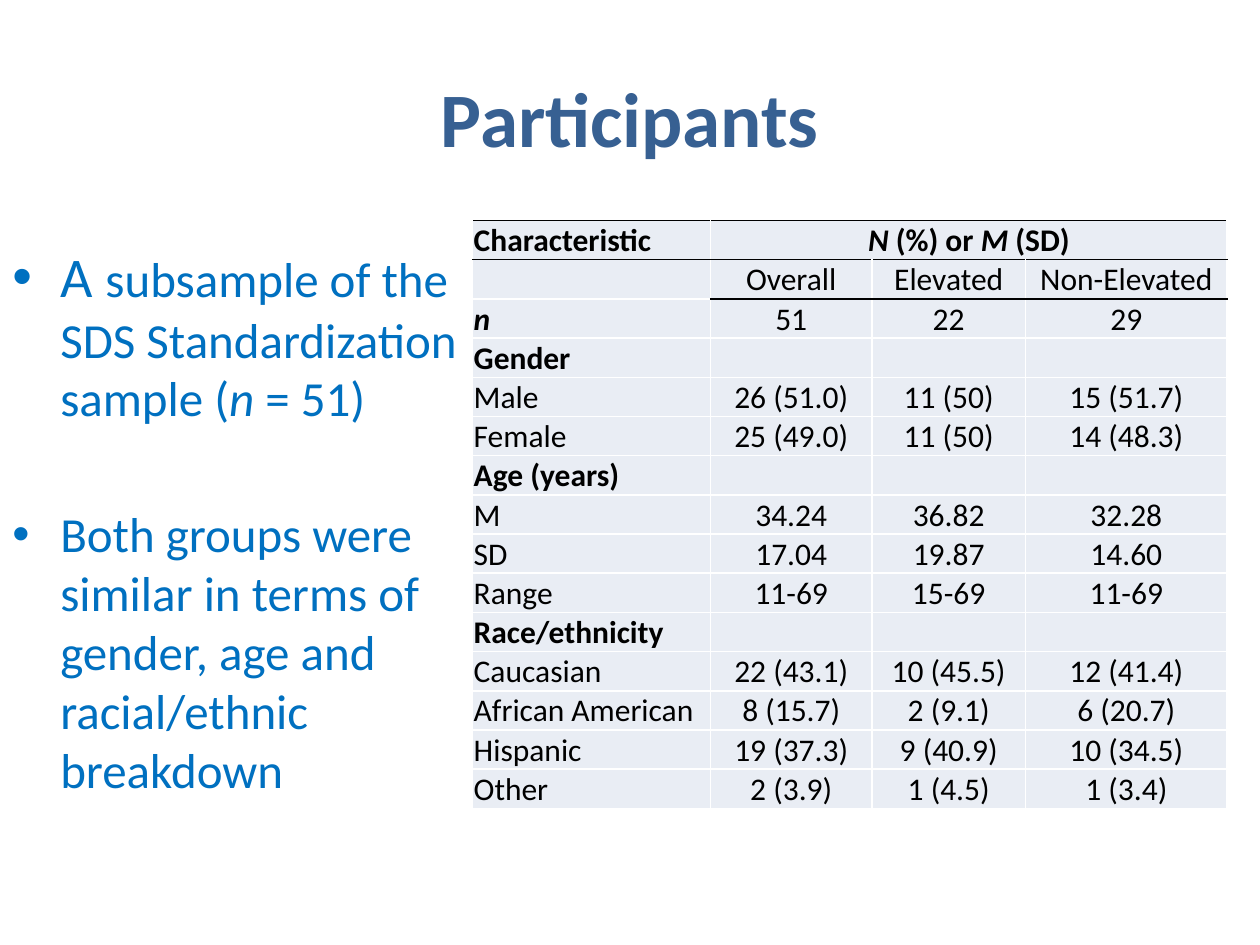
from lxml.etree import SubElement
from pptx import Presentation
from pptx.dml.color import RGBColor
from pptx.enum.text import MSO_ANCHOR, PP_ALIGN
from pptx.oxml import parse_xml
from pptx.oxml.ns import nsdecls, qn
from pptx.util import Inches, Pt

TITLE_BLUE = RGBColor(0x37, 0x60, 0x92)
BODY_BLUE = RGBColor(0x00, 0x70, 0xC0)
BLACK = RGBColor(0x00, 0x00, 0x00)
WHITE = RGBColor(0xFF, 0xFF, 0xFF)
CELL_FILL = RGBColor(0xE9, 0xED, 0xF4)

BOLD = {"bold": True}
ITALIC = {"italic": True}
BOLD_ITALIC = {"bold": True, "italic": True}

# Each bullet is a list of (text, format) runs
BULLETS = [
    [("A ", {"size": Pt(32)}), ("subsample of the SDS Standardization sample (", {}),
     ("n", ITALIC), (" = 51)", {})],
    [("Both groups were similar in terms of gender, age and racial/ethnic breakdown", {})],
]

SPANNING_HEADING = [("N", BOLD_ITALIC), (" (%) or ", BOLD), ("M", BOLD_ITALIC), (" (SD)", BOLD)]
GROUP_HEADINGS = {"Characteristic": BOLD, "n": BOLD_ITALIC, "Gender": BOLD,
                  "Age (years)": BOLD, "Race/ethnicity": BOLD}
CHARACTERISTICS = [
    ["Characteristic"],
    ["", "Overall", "Elevated", "Non-Elevated"],
    ["n", "51", "22", "29"],
    ["Gender"],
    ["Male", "26 (51.0)", "11 (50)", "15 (51.7)"],
    ["Female", "25 (49.0)", "11 (50)", "14 (48.3)"],
    ["Age (years)"],
    ["M", "34.24", "36.82", "32.28"],
    ["SD", "17.04", "19.87", "14.60"],
    ["Range", "11-69", "15-69", "11-69"],
    ["Race/ethnicity"],
    ["Caucasian", "22 (43.1)", "10 (45.5)", "12 (41.4)"],
    ["African American", "8 (15.7)", "2 (9.1)", "6 (20.7)"],
    ["Hispanic", "19 (37.3)", "9 (40.9)", "10 (34.5)"],
    ["Other", "2 (3.9)", "1 (4.5)", "1 (3.4)"],
]
COLUMN_WIDTHS = [1.89, 1.28, 1.22, 1.6]


class SlideWriter:
    """Holds the text style and the current slide."""

    font_name = "Calibri"

    def __init__(self, slide):
        self.slide = slide

    def runs(self, paragraph, parts, size, color):
        for text, changes in parts:
            run = paragraph.add_run()
            run.text = text
            values = {"name": self.font_name, "size": size, "bold": False, "italic": False}
            for name, value in (values | changes).items():
                setattr(run.font, name, value)
            run.font.color.rgb = color

    def text_frame(self, left, top, width, height, **settings):
        box = self.slide.shapes.add_textbox(
            Inches(left), Inches(top), Inches(width), Inches(height))
        for name, value in ({"word_wrap": True} | settings).items():
            setattr(box.text_frame, name, value)
        return box.text_frame

    def title(self, text):
        frame = self.text_frame(0.5, 0.3, 9, 1.25, vertical_anchor=MSO_ANCHOR.MIDDLE)
        heading = frame.paragraphs[0]
        heading.alignment = PP_ALIGN.CENTER
        self.runs(heading, [(text, BOLD)], Pt(44), TITLE_BLUE)

    def bullets(self, items):
        frame = self.text_frame(0, 1.83, 3.92, 1.75, margin_top=Inches(0.09))
        for index, parts in enumerate(items):
            bullet = frame.paragraphs[0] if index == 0 else frame.add_paragraph()
            properties = bullet._p.get_or_add_pPr()
            properties.set("marL", str(Inches(0.38)))
            properties.set("indent", str(-Inches(0.38)))
            SubElement(properties, qn("a:buFont"), typeface="Arial")
            SubElement(properties, qn("a:buChar"), char="•")
            if index:
                bullet.space_before = Pt(44)
            self.runs(bullet, parts, Pt(28), BODY_BLUE)

    def borders(self, cell, top, bottom):
        sides = {"lnL": WHITE, "lnR": WHITE, "lnT": top, "lnB": bottom}
        for position, (side, color) in enumerate(sides.items()):
            line = parse_xml(
                f'<a:{side} {nsdecls("a")} w="{Pt(1)}"><a:solidFill>'
                f'<a:srgbClr val="{color}"/></a:solidFill></a:{side}>')
            cell._tc.get_or_add_tcPr().insert(position, line)

    def cell(self, cell, parts, alignment, top, bottom):
        inset = Inches(0.01)
        layout = {"margin_left": inset, "margin_right": inset, "margin_top": inset,
                  "margin_bottom": 0, "vertical_anchor": MSO_ANCHOR.BOTTOM}
        for name, value in layout.items():
            setattr(cell, name, value)
        cell.fill.solid()
        cell.fill.fore_color.rgb = CELL_FILL
        self.borders(cell, top, bottom)
        paragraph = cell.text_frame.paragraphs[0]
        paragraph.alignment = alignment
        self.runs(paragraph, parts, Pt(18), BLACK)

    def table(self, rows, widths):
        frame = self.slide.shapes.add_table(
            len(rows), len(widths), Inches(3.75), Inches(1.75), Inches(sum(widths)), Inches(4.67))
        table = frame.table
        table.first_row = table.horz_banding = False
        for column, width in zip(table.columns, widths):
            column.width = Inches(width)
        table.cell(0, 1).merge(table.cell(0, len(widths) - 1))

        for r, row in enumerate(rows):
            for c in range(len(widths)):
                text = row[c] if c < len(row) else ""
                parts = [(text, GROUP_HEADINGS.get(text, {}))] if text else []
                if (r, c) == (0, 1):
                    parts = SPANNING_HEADING
                # Rules frame the heading row and underline the group names
                top = BLACK if r < 2 or (r == 2 and c) else WHITE
                bottom = BLACK if r == 0 or (r == 1 and c) else WHITE
                alignment = PP_ALIGN.CENTER if c else PP_ALIGN.LEFT
                self.cell(table.cell(r, c), parts, alignment, top, bottom)


def main():
    presentation = Presentation()
    presentation.slide_width = Inches(10)
    presentation.slide_height = Inches(7.5)
    writer = SlideWriter(presentation.slides.add_slide(presentation.slide_layouts[6]))

    # Heading, sample summary and characteristics table
    writer.title("Participants")
    writer.bullets(BULLETS)
    writer.table(CHARACTERISTICS, COLUMN_WIDTHS)

    presentation.save("out.pptx")


if __name__ == "__main__":
    main()
